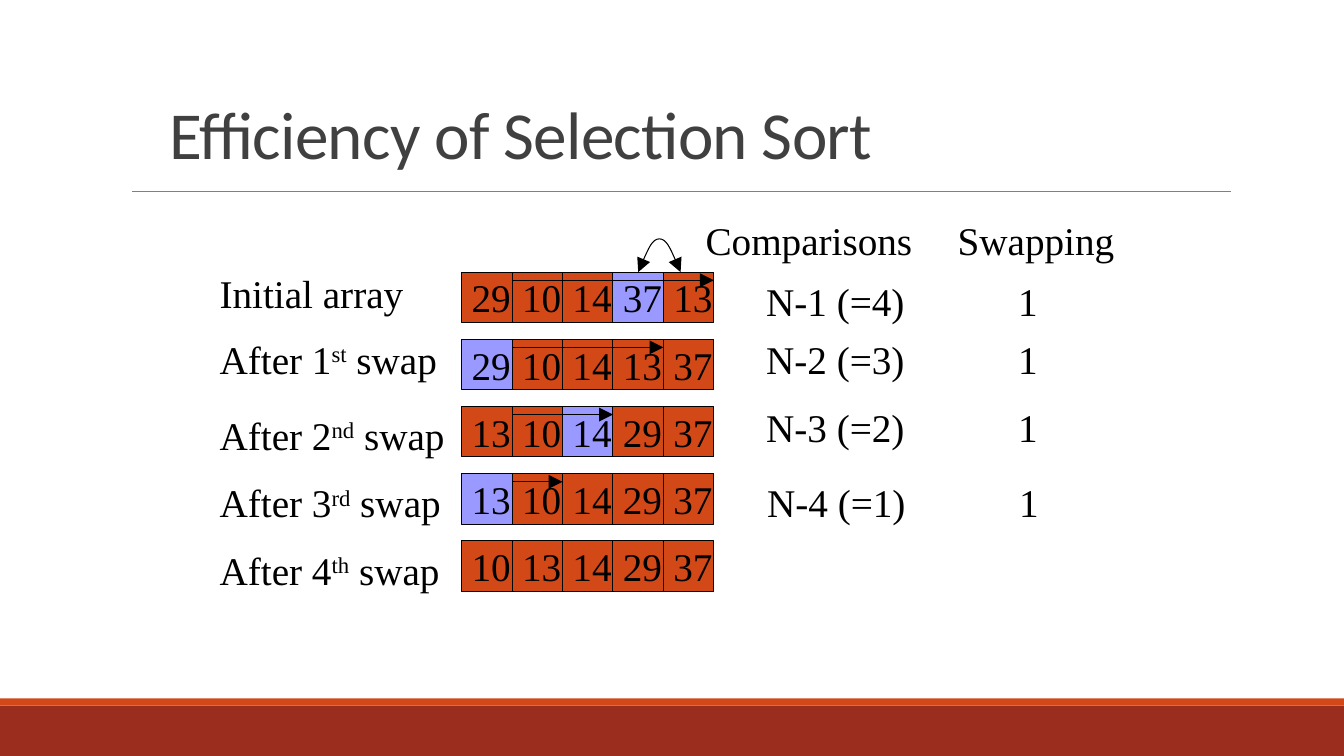
"""Build a slide on the efficiency of selection sort."""
import pptx
import pptx.dml.color
import pptx.enum.shapes
import pptx.enum.text
import pptx.oxml
import pptx.oxml.ns
import pptx.util

Inches = pptx.util.Inches
Pt = pptx.util.Pt
SHAPES = pptx.enum.shapes.MSO_SHAPE
ANCHOR = pptx.enum.text.MSO_ANCHOR
FIT = pptx.enum.text.MSO_AUTO_SIZE

ORANGE, BRICK, LILAC = "D34817", "9B2D1F", "9999FF"
BLACK, GREY, CHARCOAL = "000000", "808080", "404040"

BODY = {"name": "Times New Roman", "size": Pt(28)}
HEADING = {"name": "Calibri", "size": Pt(48)}
CELL_FRAME = {"word_wrap": False, "vertical_anchor": ANCHOR.MIDDLE}
LABEL_FRAME = {"word_wrap": False, "auto_size": FIT.SHAPE_TO_FIT_TEXT}
TITLE_FRAME = {"word_wrap": True, "vertical_anchor": ANCHOR.BOTTOM}

CELL = 0.5
ARRAY_LEFT, ARRAY_TOP, ROW_STEP = 4.58, 2.7, 2 / 3
TAB_STOPS = (1.5, 2, 2.5)

ARRAYS = (
    ((29, 10, 14, 37, 13), 3, 4),
    ((29, 10, 14, 13, 37), 0, 3),
    ((13, 10, 14, 29, 37), 2, 2),
    ((13, 10, 14, 29, 37), 0, 1),
    ((10, 13, 14, 29, 37), None, 0),
)
LABELS = (
    (2.62, 2.02, ("Initial array",)),
    (3.28, 2.4, ("After 1", "st", " swap")),
    (4.03, 2.48, ("After 2", "nd", " swap")),
    (4.7, 2.44, ("After 3", "rd", " swap")),
    (5.37, 2.42, ("After 4", "th", " swap")),
)
COUNTS = (
    (7.5, 2.7, 2.92, "N-1 (=4)\t\t\t1"),
    (7.5, 3.28, 2.92, "N-2 (=3)\t\t\t1"),
    (7.5, 3.95, 2.92, "N-3 (=2)\t\t\t1"),
    (7.51, 4.7, 2.92, "N-4 (=1)\t\t\t1"),
    (6.9, 2.1, 4.3, "Comparisons\tSwapping"),
)


def colour(code):
    """Turn a hex string into a colour."""
    return pptx.dml.color.RGBColor.from_string(code)


def apply(target, values):
    """Set each named attribute on the target."""
    for name, value in values.items():
        setattr(target, name, value)


def add_child(parent, tag, **attributes):
    """Append a drawing element with the given attributes."""
    child = pptx.oxml.parse_xml(f"<{tag} {pptx.oxml.ns.nsdecls('a')}/>")
    for name, value in attributes.items():
        child.set(name, str(value))
    parent.append(child)
    return child


def style_line(shape, code, width, arrows=()):
    """Give a shape its line colour, width and arrowheads."""
    shape.line.color.rgb = colour(code)
    shape.line.width = Pt(width)
    for end in arrows:
        add_child(shape.line._ln, f"a:{end}", type="triangle", w="lg", len="lg")


def write(shape, spans, frame_format, font_format, code=BLACK):
    """Write spans, every second one raised, and return the paragraph."""
    apply(shape.text_frame, frame_format)
    para = shape.text_frame.paragraphs[0]
    para.alignment = pptx.enum.text.PP_ALIGN.LEFT
    for index, text in enumerate(spans):
        span = para.add_run()
        span.text = text
        apply(span.font, font_format)
        span.font.color.rgb = colour(code)
        if index % 2:
            span.font._element.set("baseline", "30000")
    return para


def add_box(page, left, top, width, height, fill):
    """Add a plain filled rectangle."""
    box = page.shapes.add_shape(
        SHAPES.RECTANGLE, Inches(left), Inches(top), Inches(width), Inches(height))
    box.shadow.inherit = False
    box.fill.solid()
    box.fill.fore_color.rgb = colour(fill)
    box.line.fill.background()
    return box


def add_text(page, left, top, width, height, spans, *formats):
    """Add a text box and return its paragraph."""
    box = page.shapes.add_textbox(
        Inches(left), Inches(top), Inches(width), Inches(height))
    return write(box, spans, *formats)


def add_line(page, left, right, height, code, width, arrows=()):
    """Add a horizontal line."""
    line = page.shapes.add_connector(
        pptx.enum.shapes.MSO_CONNECTOR.STRAIGHT,
        Inches(left), Inches(height), Inches(right), Inches(height))
    style_line(line, code, width, arrows)
    add_child(line._element.spPr, "a:effectLst")


def add_array(page, top, values, largest):
    """Add one row of array cells, with the largest value marked."""
    for index, value in enumerate(values):
        fill = LILAC if index == largest else ORANGE
        cell = add_box(page, ARRAY_LEFT + index * CELL, top, CELL, CELL, fill)
        style_line(cell, BLACK, 0.75)
        write(cell, (str(value),), CELL_FRAME, BODY)


def add_swap_curve(page):
    """Add the curved double arrow between the two swapped cells."""
    start, *points = [(Inches(x), Inches(y)) for x, y in (
        (6.33, 2.7), (6.4, 2.53), (6.47, 2.37), (6.54, 2.37),
        (6.61, 2.37), (6.68, 2.53), (6.75, 2.7))]
    builder = page.shapes.build_freeform(*start)
    builder.add_line_segments(points, close=False)
    curve = builder.convert_to_shape()
    curve.shadow.inherit = False
    curve.fill.background()
    style_line(curve, BLACK, 0.75, ("headEnd", "tailEnd"))
    outline = curve._element.xpath(".//a:path")[0]
    segments = outline.xpath("a:lnTo")
    for index in range(0, len(segments), 3):
        bezier = add_child(outline, "a:cubicBezTo")
        for segment in segments[index:index + 3]:
            bezier.append(segment[0])
            outline.remove(segment)


def add_counts(page, left, top, width, text):
    """Add a line of tabbed counts."""
    para = add_text(page, left, top, width, 0.57, (text,), LABEL_FRAME, BODY)
    stops = add_child(para._p.get_or_add_pPr(), "a:tabLst")
    for stop in TAB_STOPS:
        add_child(stops, "a:tab", pos=Inches(stop), algn="l")


def add_title(page):
    """Add the slide title and the rule below it."""
    para = add_text(page, 1.58, 0.52, 8.5, 1.25, ("Efficiency of Selection Sort",),
                    TITLE_FRAME, HEADING, CHARCOAL)
    para.line_spacing = 0.85
    para.runs[0].font._element.set("spc", "-50")
    add_line(page, 1.31, 12.21, 1.9, GREY, 0.5)


def main():
    """Build and save the deck."""
    deck = pptx.Presentation()
    apply(deck, {"slide_width": Inches(13.33), "slide_height": Inches(7.5)})
    page = deck.slides.add_slide(deck.slide_layouts[6])
    add_box(page, 0, 7, 13.33, 0.5, BRICK)
    add_box(page, 0, 6.93, 13.33, 0.07, ORANGE)
    add_title(page)
    for row, (values, largest, comparisons) in enumerate(ARRAYS):
        top = ARRAY_TOP + row * ROW_STEP
        add_array(page, top, values, largest)
        if comparisons:
            left = ARRAY_LEFT + CELL
            add_line(page, left, left + comparisons * CELL, top + 0.08,
                     BLACK, 0.75, ("tailEnd",))
    for top, width, spans in LABELS:
        add_text(page, 2.08, top, width, 0.57, spans, LABEL_FRAME, BODY)
    for count in COUNTS:
        add_counts(page, *count)
    add_swap_curve(page)
    deck.save("out.pptx")


if __name__ == "__main__":
    main()
